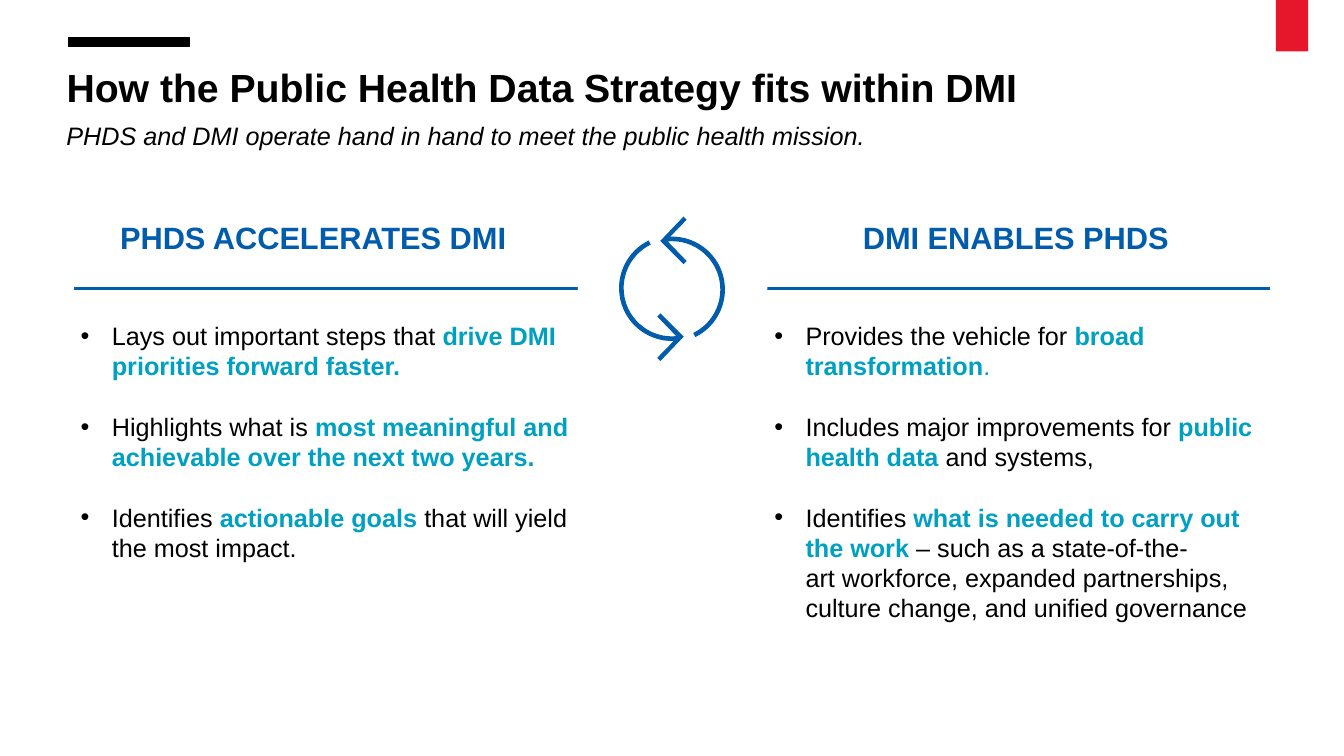
import math
from dataclasses import dataclass

import pptx
import pptx.dml.color
import pptx.enum.shapes
import pptx.enum.text
import pptx.oxml.ns
import pptx.util
from lxml import etree

WIDE, HIGH = pptx.util.Inches(13.33), pptx.util.Inches(7.5)
BLACK, WHITE, RED, BLUE, CYAN = "000000", "FFFFFF", "E6172B", "015CAC", "00A0C2"
ALIGN = pptx.enum.text.PP_ALIGN
ANCHOR = pptx.enum.text.MSO_ANCHOR
SHAPE = pptx.enum.shapes.MSO_SHAPE
INDENT = pptx.util.Inches(0.31)
TIE = chr(160)  # no-break space


@dataclass
class Box:
    """A frame in percent of the slide's width and height."""
    left: float
    top: float
    width: float
    height: float

    def frame(self) -> tuple[int, int, int, int]:
        return (across(self.left), down(self.top),
                across(self.width), down(self.height))


@dataclass
class Span:
    text: str
    color: str = BLACK
    bold: bool = False


@dataclass
class Column:
    head: str
    head_box: Box
    list_box: Box
    items: list[list[Span]]


def across(share: float) -> int:
    return round(WIDE * share / 100)


def down(share: float) -> int:
    return round(HIGH * share / 100)


def tint(code: str) -> pptx.dml.color.RGBColor:
    return pptx.dml.color.RGBColor.from_string(code)


def key(text: str) -> Span:
    return Span(text, CYAN, True)


def place(shape, box: Box):
    shape.left, shape.top, shape.width, shape.height = box.frame()
    return shape


def paint(shape, fill: str, line: str = "", weight: float = 0) -> None:
    shape.shadow.inherit = False
    shape.fill.solid()
    shape.fill.fore_color.rgb = tint(fill)
    if line:
        shape.line.color.rgb = tint(line)
        shape.line.width = pptx.util.Pt(weight)
    else:
        shape.line.fill.background()


def write(shape, lines: list[list[Span]], size: float, italic: bool = False,
          align=ALIGN.LEFT, anchor=ANCHOR.TOP, spacing=1.0,
          gap: float = 0, bullet: str = "", inset: bool = True) -> None:
    frame = shape.text_frame
    frame.word_wrap = True
    frame.auto_size = pptx.enum.text.MSO_AUTO_SIZE.NONE
    frame.vertical_anchor = anchor
    if not inset:
        frame.margin_left = frame.margin_right = 0
        frame.margin_top = frame.margin_bottom = 0
    for order, spans in enumerate(lines):
        para = frame.add_paragraph() if order else frame.paragraphs[0]
        if bullet:
            props = para._p.get_or_add_pPr()
            props.set("marL", str(INDENT))
            props.set("indent", str(-INDENT))
            mark = etree.SubElement(props, pptx.oxml.ns.qn("a:buChar"))
            mark.set("char", bullet)
        para.alignment = align
        para.line_spacing = spacing
        para.space_before = pptx.util.Pt(gap if order else 0)
        for span in spans:
            run = para.add_run()
            run.text = span.text
            font = run.font
            font.name, font.size = "Arial", pptx.util.Pt(size)
            font.bold, font.italic = span.bold, italic
            font.color.rgb = tint(span.color)


def arc(radius: float, *angles: int) -> list[tuple[float, float]]:
    """Start point, then two controls and an end for each Bezier piece."""
    turns = [math.radians(angle) for angle in angles]

    def spot(turn: float, pull: float = 0) -> tuple[float, float]:
        return (radius * (math.cos(turn) - pull * math.sin(turn)),
                radius * (math.sin(turn) + pull * math.cos(turn)) - 0.1)

    points = [spot(turns[0])]
    for start, end in zip(turns, turns[1:]):
        pull = 4 / 3 * math.tan((end - start) / 4)
        points += [spot(start, pull), spot(end, -pull), spot(end)]
    return points


def arrow(slide, sign: int) -> None:
    """Half of the cycle; sign -1 turns it by 180 degrees about the centre."""
    edge = [(-1.53, 3.4), (-1.8, 3.67), *arc(6.5, 83, 180, 243),
            *arc(6.9, 243, 180, 86), (-1.8, 9.13), (-1.53, 9.4), (1.4, 6.33)]
    points = [(across(50) + down(sign * x), down(38.2 + sign * y)) for x, y in edge]
    route = slide.shapes.build_freeform(*points[0])
    route.add_line_segments(points[1:], close=True)
    shape = route.convert_to_shape()
    paint(shape, BLUE, BLUE, 1.12)
    miter = etree.SubElement(shape.line._get_or_add_ln(), pptx.oxml.ns.qn("a:miter"))
    miter.set("lim", "800000")

    steps = list(shape._element.iter(pptx.oxml.ns.qn("a:lnTo")))
    for first in (2, 5, 9, 12):
        bend, *rest = steps[first:first + 3]
        curve = etree.Element(pptx.oxml.ns.qn("a:cubicBezTo"))
        bend.getparent().replace(bend, curve)
        curve.append(bend[0])
        for step in rest:
            curve.append(step[0])
            step.getparent().remove(step)


def rule(slide, left: float, right: float, top: float) -> None:
    line = slide.shapes.add_connector(
        pptx.enum.shapes.MSO_CONNECTOR.STRAIGHT,
        across(left), down(top), across(right), down(top))
    line.line.color.rgb = tint(BLUE)
    line.line.width = pptx.util.Pt(2.25)
    etree.SubElement(line._element.spPr, pptx.oxml.ns.qn("a:effectLst"))


COLUMNS = [
    Column("PHDS ACCELERATES DMI", Box(7.43, 29.33, 31.73, 4.67),
           Box(6, 42.4, 36.91, 32.27), [
        [Span("Lays out important steps that "),
         key("drive DMI priorities forward faster.")],
        [Span("Highlights what is "),
         key("most meaningful and achievable over the next two years.")],
        [Span("Identifies "), key("actionable goals "),
         Span("that will yield the most impact.")],
    ]),
    Column("DMI ENABLES PHDS", Box(60.69, 29.33, 29.78, 4.67),
           Box(57.61, 42.4, 36.38, 44.4), [
        [Span("Provides the vehicle for "), key("broad transformation"),
         Span(".", CYAN)],
        [Span("Includes major improvements for "), key("public health data"),
         Span(" and systems,")],
        [Span("Identifies "), key("what is needed to carry out the work"),
         Span(f" – such as a state-of-the-art{TIE}workforce, expanded{TIE}partnerships, "
              f"culture{TIE}change, and unified governance")],
    ]),
]


def main() -> None:
    deck = pptx.Presentation()
    deck.slide_width, deck.slide_height = WIDE, HIGH
    slide = deck.slides.add_slide(deck.slide_layouts.get_by_name("Comparison"))
    title, *bodies = slide.placeholders

    write(place(title, Box(4.2, 8.4, 91, 10.13)),
          [[Span("How the Public Health Data Strategy fits within DMI", bold=True)]],
          28, spacing=0.9)
    motto = slide.shapes.add_textbox(*Box(4.2, 15.2, 91, 5.33).frame())
    write(motto, [[Span("PHDS and DMI operate hand in hand to meet "
                        "the public health mission.")]], 18, italic=True)

    tag = slide.shapes.add_shape(SHAPE.RECTANGLE, *Box(94.93, 0, 2.4, 6.8).frame())
    paint(tag, RED)
    bar = slide.shapes.add_shape(SHAPE.RECTANGLE, *Box(5.1, 4.93, 9, 1.2).frame())
    paint(bar, BLACK, BLACK, 1)

    rule(slide, 5.48, 94.52, 38.13)
    for column, head, items in zip(COLUMNS, bodies[::2], bodies[1::2]):
        write(place(head, column.head_box), [[Span(column.head, BLUE, True)]], 22,
              align=ALIGN.CENTER, anchor=ANCHOR.MIDDLE, spacing=0.9)
        write(place(items, column.list_box), column.items, 18, bullet="•",
              spacing=pptx.util.Pt(21.6), gap=21.6, inset=False)

    disc = slide.shapes.add_shape(SHAPE.OVAL, *Box(42.99, 25.6, 14.1, 25.07).frame())
    paint(disc, WHITE)
    for sign in (1, -1):
        arrow(slide, sign)
    deck.save("out.pptx")


if __name__ == "__main__":
    main()
